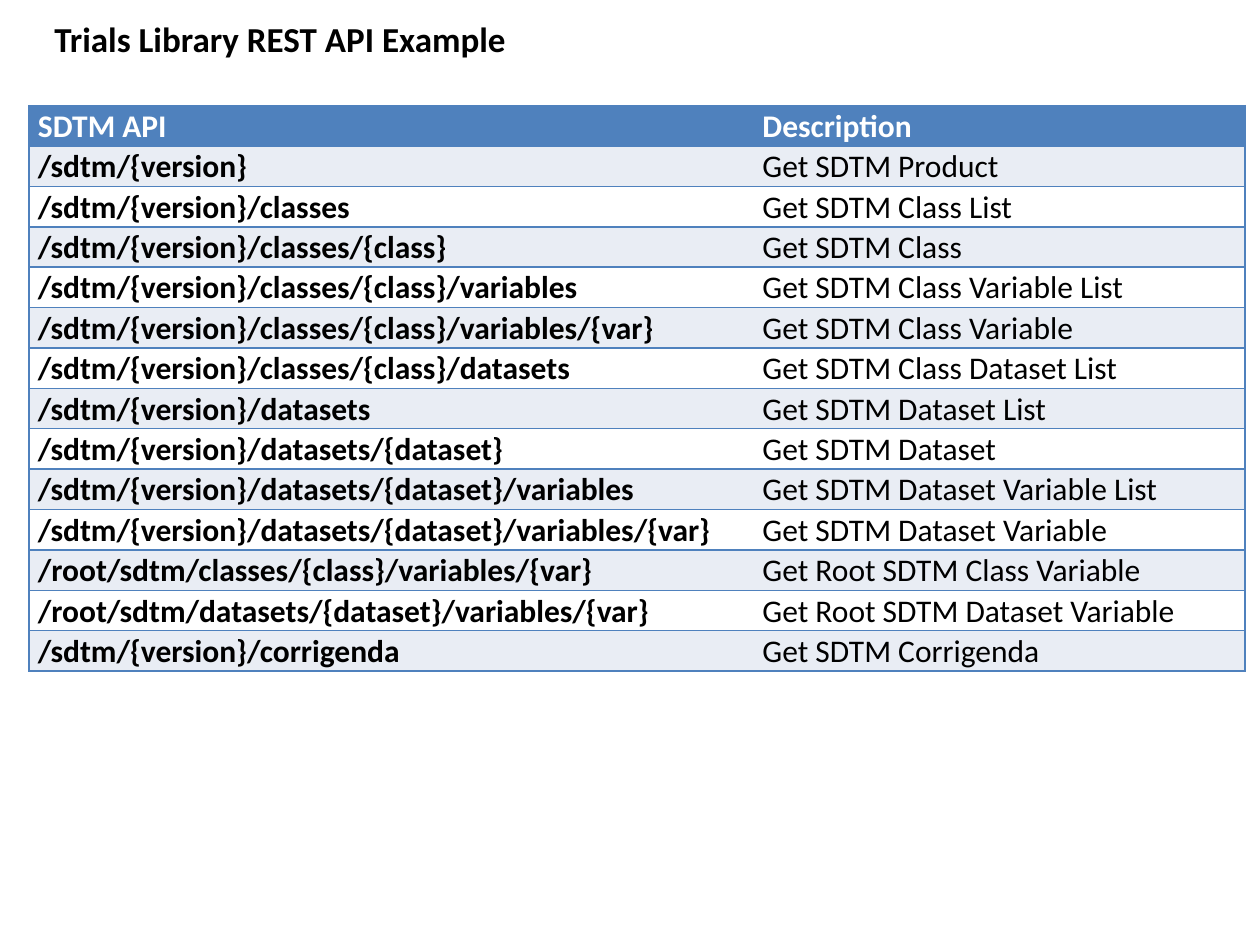
from typing import NamedTuple

from lxml.etree import SubElement
from pptx import Presentation
from pptx.dml.color import RGBColor
from pptx.enum.text import MSO_ANCHOR, MSO_AUTO_SIZE, PP_ALIGN
from pptx.oxml.ns import qn
from pptx.util import Pt

FONT = "Calibri"
BLUE = "4F81BD"
PALE = "E9EDF4"
WHITE = "FFFFFF"
BLACK = "000000"
NO_GRID_STYLE = "{2D5ABB26-0587-4C30-8999-92F81FD0307C}"
ROW_HEIGHT = 23.1
COLUMN_WIDTHS = (414, 280.8)
COLUMN_BORDERS = (("lnL", "lnT", "lnB"), ("lnR", "lnT", "lnB"))


class Endpoint(NamedTuple):
    route: str
    description: str


HEADER = Endpoint("SDTM API", "Description")
ENDPOINTS = [
    Endpoint("/sdtm/{version}", "Get SDTM Product"),
    Endpoint("/sdtm/{version}/classes", "Get SDTM Class List"),
    Endpoint("/sdtm/{version}/classes/{class}", "Get SDTM Class"),
    Endpoint("/sdtm/{version}/classes/{class}/variables", "Get SDTM Class Variable List"),
    Endpoint("/sdtm/{version}/classes/{class}/variables/{var}", "Get SDTM Class Variable"),
    Endpoint("/sdtm/{version}/classes/{class}/datasets", "Get SDTM Class Dataset List"),
    Endpoint("/sdtm/{version}/datasets", "Get SDTM Dataset List"),
    Endpoint("/sdtm/{version}/datasets/{dataset}", "Get SDTM Dataset"),
    Endpoint("/sdtm/{version}/datasets/{dataset}/variables", "Get SDTM Dataset Variable List"),
    Endpoint("/sdtm/{version}/datasets/{dataset}/variables/{var}", "Get SDTM Dataset Variable"),
    Endpoint("/root/sdtm/classes/{class}/variables/{var}", "Get Root SDTM Class Variable"),
    Endpoint("/root/sdtm/datasets/{dataset}/variables/{var}", "Get Root SDTM Dataset Variable"),
    Endpoint("/sdtm/{version}/corrigenda", "Get SDTM Corrigenda"),
]


def color(value: str) -> RGBColor:
    return RGBColor.from_string(value)


def format_paragraph(para, size: float, ink: str, bold: bool) -> None:
    para.alignment = PP_ALIGN.LEFT
    para.font.name = FONT
    para.font.size = Pt(size)
    para.font.bold = bold
    para.font.color.rgb = color(ink)


def add_borders(cell, sides: tuple[str, ...]) -> None:
    properties = cell._tc.get_or_add_tcPr()
    for side in sides:
        line = SubElement(properties, qn(f"a:{side}"), w=str(Pt(1)))
        fill = SubElement(line, qn("a:solidFill"))
        SubElement(fill, qn("a:srgbClr"), val=BLUE)


def fill_cell(cell, text: str, fill: str, ink: str, bold: bool, sides: tuple[str, ...]) -> None:
    cell.text = text
    cell.margin_left = cell.margin_right = Pt(5)
    cell.margin_top = Pt(1)
    cell.margin_bottom = Pt(0)
    add_borders(cell, sides)
    cell.fill.solid()
    cell.fill.fore_color.rgb = color(fill)
    format_paragraph(cell.text_frame.paragraphs[0], 18, ink, bold)


def add_title(page, text: str) -> None:
    box = page.shapes.title
    box.left, box.top, box.width, box.height = Pt(23.8), Pt(6.5), Pt(299.5), Pt(31.7)
    frame = box.text_frame
    frame.text = text
    frame.word_wrap = True
    frame.auto_size = MSO_AUTO_SIZE.SHAPE_TO_FIT_TEXT
    frame.vertical_anchor = MSO_ANCHOR.TOP
    format_paragraph(frame.paragraphs[0], 20, BLACK, True)


def add_endpoint_table(page) -> None:
    rows = [HEADER, *ENDPOINTS]
    frame = page.shapes.add_table(
        len(rows), len(COLUMN_WIDTHS), Pt(16.7), Pt(60.4),
        Pt(sum(COLUMN_WIDTHS)), Pt(ROW_HEIGHT * len(rows)),
    )
    table = frame.table
    table._tbl.tblPr.find(qn("a:tableStyleId")).text = NO_GRID_STYLE
    for column, width in zip(table.columns, COLUMN_WIDTHS):
        column.width = Pt(width)
    for index, endpoint in enumerate(rows):
        table.rows[index].height = Pt(ROW_HEIGHT)
        is_header = index == 0
        fill = BLUE if is_header else PALE if index % 2 else WHITE
        ink = WHITE if is_header else BLACK
        for position, text in enumerate(endpoint):
            bold = is_header or position == 0
            fill_cell(table.cell(index, position), text, fill, ink, bold, COLUMN_BORDERS[position])


def main() -> None:
    deck = Presentation()
    deck.slide_width, deck.slide_height = Pt(720), Pt(540)
    page = deck.slides.add_slide(deck.slide_layouts[5])
    add_endpoint_table(page)
    add_title(page, "Trials Library REST API Example")
    deck.save("out.pptx")


if __name__ == "__main__":
    main()
